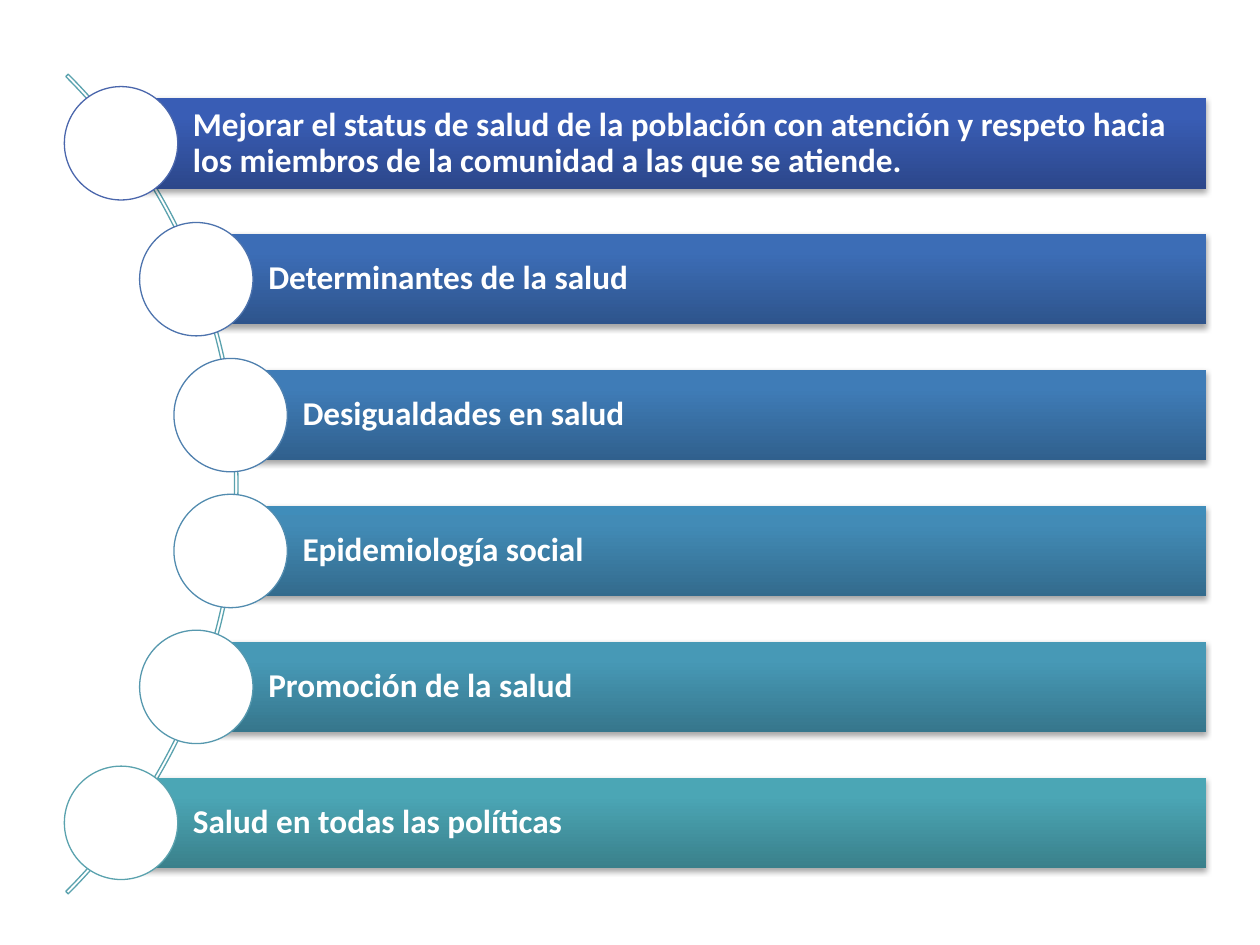
from copy import deepcopy

from lxml.etree import SubElement
from pptx import Presentation
from pptx.dml.color import RGBColor
from pptx.enum.shapes import MSO_SHAPE
from pptx.enum.text import MSO_ANCHOR, PP_ALIGN
from pptx.oxml.ns import qn
from pptx.util import Pt

COLORS = {"white": "FFFFFF", "shadow": "000000", "arc": "5AA2AE"}

ROWS = [
    ("Mejorar el status de salud de la población con atención y respeto hacia "
     "los miembros de la comunidad a las que se atiende.",
     69.2, ("2C478B", "395DB5", "375CB8"), "4A66AC"),
    ("Determinantes de la salud", 112.2, ("2E548C", "3C6DB6", "3A6DB9"), "4D73AD"),
    ("Desigualdades en salud", 131.8, ("30608D", "3F7CB7", "3D7DBA"), "4F80AE"),
    ("Epidemiología social", 131.8, ("336B8D", "428BB6", "408DBA"), "528CAF"),
    ("Promoción de la salud", 112.2, ("36768C", "4799B6", "459BB9"), "5698AE"),
    ("Salud en todas las políticas", 69.2, ("3A808B", "4BA6B5", "49A8B8"), "5AA2AE"),
]
STOP_POSITIONS = (0, 0.8, 1)
BAR_TOP, BAR_HEIGHT, BAR_RIGHT = 56, 51.8, 689.2
ROW_PITCH = 77.66
CIRCLE_SIZE = 64.8
ARC_SIZE = 662.4


def add_outlined(shapes, kind, left, top, size, line_color):
    shape = shapes.add_shape(kind, Pt(left), Pt(top), Pt(size), Pt(size))
    shape.shadow.inherit = False
    shape.line.color.rgb = RGBColor.from_string(line_color)
    shape.line.width = Pt(0.75)
    return shape


def style_bar(bar, stop_colors):
    bar.line.fill.background()
    bar.fill.gradient()
    bar.fill.gradient_angle = 90
    properties = bar._element.spPr
    stop_list = properties.find(qn("a:gradFill")).find(qn("a:gsLst"))
    stop_list.append(deepcopy(stop_list[-1]))
    for stop, position, color in zip(bar.fill.gradient_stops, STOP_POSITIONS, stop_colors):
        stop.position = position
        stop.color.rgb = RGBColor.from_string(color)

    bar.shadow.inherit = False
    shadow = SubElement(
        properties.find(qn("a:effectLst")), qn("a:outerShdw"),
        blurRad=str(Pt(3.1)), dist=str(Pt(1.8)), dir="5400000", rotWithShape="0")
    shadow_color = SubElement(shadow, qn("a:srgbClr"), val=COLORS["shadow"])
    SubElement(shadow_color, qn("a:alpha"), val="35000")


deck = Presentation()
deck.slide_width, deck.slide_height = Pt(720), Pt(540)
page = deck.slides.add_slide(deck.slide_layouts[6])

arc = add_outlined(page.shapes, MSO_SHAPE.BLOCK_ARC, -526.4, -54.6, ARC_SIZE, COLORS["arc"])
arc.fill.background()
for index, value in enumerate((189, 27, 0.003)):
    arc.adjustments[index] = value

for row, (text, left, stop_colors, outline) in enumerate(ROWS):
    top = BAR_TOP + row * ROW_PITCH
    bar = page.shapes.add_shape(
        MSO_SHAPE.RECTANGLE, Pt(left), Pt(top), Pt(BAR_RIGHT - left), Pt(BAR_HEIGHT))
    style_bar(bar, stop_colors)

    frame = bar.text_frame
    frame.word_wrap = True
    frame.vertical_anchor = MSO_ANCHOR.MIDDLE
    frame.margin_left = Pt(41.1)
    frame.margin_right = frame.margin_top = frame.margin_bottom = Pt(3.8)
    para = frame.paragraphs[0]
    para.text = text
    para.alignment = PP_ALIGN.LEFT
    para.line_spacing = 0.9
    para.font.name = "Calibri"
    para.font.size = Pt(19)
    para.font.bold = True
    para.font.color.rgb = RGBColor.from_string(COLORS["white"])

    circle = add_outlined(
        page.shapes, MSO_SHAPE.OVAL, left - CIRCLE_SIZE / 2,
        top + (BAR_HEIGHT - CIRCLE_SIZE) / 2, CIRCLE_SIZE, outline)
    circle.fill.solid()
    circle.fill.fore_color.rgb = RGBColor.from_string(COLORS["white"])

deck.save("out.pptx")
